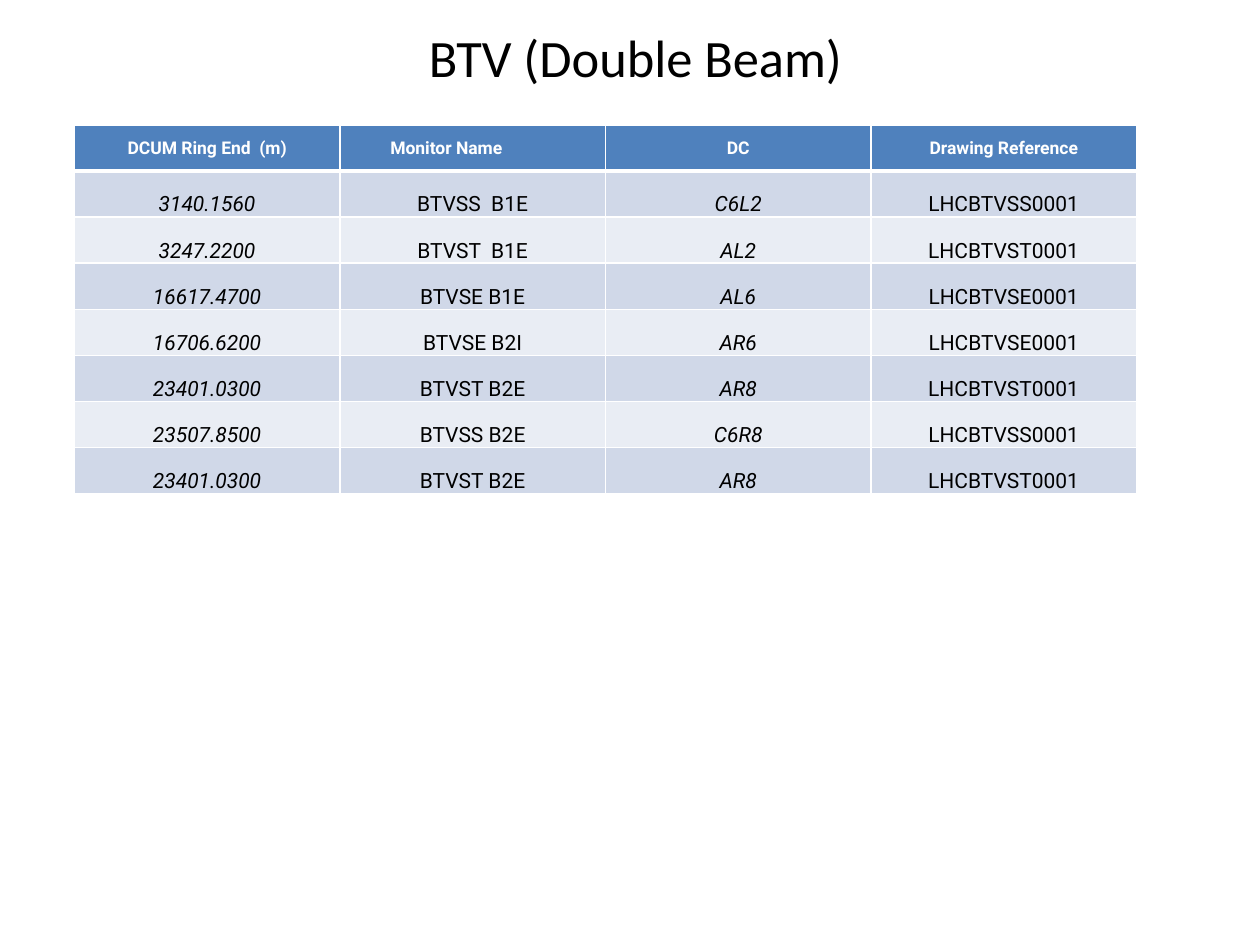
"""Build the BTV (Double Beam) monitor table slide."""
from lxml import etree
from pptx import Presentation
from pptx.dml.color import RGBColor
from pptx.enum.text import MSO_ANCHOR, PP_ALIGN
from pptx.oxml.ns import qn
from pptx.util import Inches, Pt

CENTER = PP_ALIGN.CENTER
MIDDLE, BOTTOM = MSO_ANCHOR.MIDDLE, MSO_ANCHOR.BOTTOM
BLACK = RGBColor(0x00, 0x00, 0x00)
WHITE = RGBColor(0xFF, 0xFF, 0xFF)
HEADER_BLUE = RGBColor(0x4F, 0x81, 0xBD)
BAND_DARK = RGBColor(0xD0, 0xD8, 0xE8)
BAND_LIGHT = RGBColor(0xE9, 0xED, 0xF4)

ROWS = [
    ("DCUM Ring End  (m)", "Monitor Name", "DC", "Drawing Reference"),
    ("3140.1560", "BTVSS  B1E", "C6L2", "LHCBTVSS0001"),
    ("3247.2200", "BTVST  B1E", "AL2", "LHCBTVST0001"),
    ("16617.4700", "BTVSE B1E", "AL6", "LHCBTVSE0001"),
    ("16706.6200", "BTVSE B2I", "AR6", "LHCBTVSE0001"),
    ("23401.0300", "BTVST B2E", "AR8", "LHCBTVST0001"),
    ("23507.8500", "BTVSS B2E", "C6R8", "LHCBTVSS0001"),
    ("23401.0300", "BTVST B2E", "AR8", "LHCBTVST0001"),
]
ITALIC_COLUMNS = (0, 2)
MARGINS = {"margin_left": 0.01, "margin_top": 0.01, "margin_right": 0.01, "margin_bottom": 0}
TITLE_FONT = {"name": "Calibri", "size": Pt(30), "bold": False}
HEADER_FONT = {"name": "Roboto", "size": Pt(10), "bold": True}
BODY_FONT = {"name": "Roboto", "size": Pt(12), "bold": False}


def write(p, text, font, color):
    p.alignment = CENTER
    r = p.add_run()
    r.text = text
    for name, value in font.items():
        setattr(r.font, name, value)
    r.font.color.rgb = color


def add_border(cell, side, width):
    tc_pr = cell._tc.get_or_add_tcPr()
    ln = etree.SubElement(tc_pr, qn(f"a:ln{side}"), w=str(Pt(width)))
    fill = etree.SubElement(ln, qn("a:solidFill"))
    etree.SubElement(fill, qn("a:srgbClr"), val=str(WHITE))


prs = Presentation()
prs.slide_width, prs.slide_height = Inches(10), Inches(7.5)
s = prs.slides.add_slide(prs.slide_layouts[5])

title = s.shapes.title
title.left, title.top = Inches(1.54), Inches(0.13)
title.width, title.height = Inches(7.01), Inches(0.63)
tf = title.text_frame
tf.vertical_anchor = MIDDLE
write(tf.paragraphs[0], "BTV (Double Beam)", TITLE_FONT, BLACK)

table = s.shapes.add_table(
    len(ROWS), len(ROWS[0]), Inches(0.59), Inches(0.99), Inches(8.43), Inches(2.93)
).table

for row, texts in enumerate(ROWS):
    header = row == 0
    band = BAND_DARK if row % 2 else BAND_LIGHT
    for col, text in enumerate(texts):
        cell = table.cell(row, col)
        for name, value in MARGINS.items():
            setattr(cell, name, Inches(value))
        cell.vertical_anchor = MIDDLE if header else BOTTOM
        widths = {"L": 1, "R": 1, "T": 3 if row == 1 else 1, "B": 3 if header else 1}
        for side, width in widths.items():
            add_border(cell, side, width)
        cell.fill.solid()
        cell.fill.fore_color.rgb = HEADER_BLUE if header else band
        font = HEADER_FONT if header else BODY_FONT | {"italic": col in ITALIC_COLUMNS}
        write(cell.text_frame.paragraphs[0], text, font, WHITE if header else BLACK)

table.cell(0, 1).margin_right = Inches(0.43)

prs.save("out.pptx")
